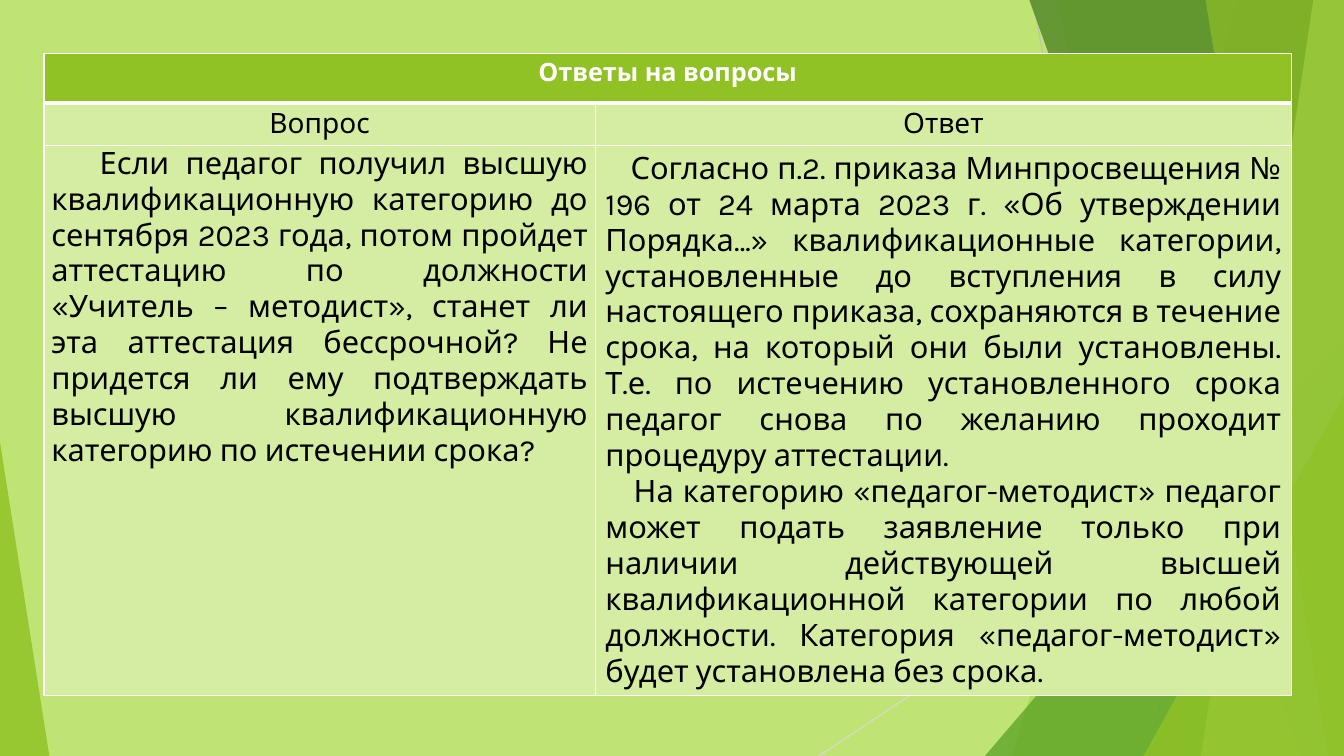
from lxml.etree import SubElement
from pptx import Presentation
from pptx.dml.color import RGBColor
from pptx.enum.shapes import MSO_CONNECTOR, MSO_SHAPE
from pptx.enum.text import PP_ALIGN
from pptx.oxml.ns import qn
from pptx.util import Pt

EMU_PER_PX = 9525
WIDTH, HEIGHT = 1280, 720
FONT = "Karla"
LIME, PALE_LIME, LIGHT_GREEN = "90C226", "D5EDA2", "C0E474"
GREEN, DARK_GREEN = "54A021", "3F7819"
WHITE, BLACK = "FFFFFF", "000000"

QUESTION = (
    "Если педагог получил высшую квалификационную категорию до сентября 2023 года, "
    "потом пройдет аттестацию по должности «Учитель – методист», станет ли эта "
    "аттестация бессрочной? Не придется ли ему подтверждать высшую "
    "квалификационную категорию по истечении срока?"
)
ANSWER = (
    "Согласно п.2. приказа Минпросвещения № 196 от 24 марта 2023 г. «Об утверждении "
    "Порядка…» квалификационные категории, установленные до вступления в силу "
    "настоящего приказа, сохраняются в течение срока, на который они были "
    "установлены. Т.е. по истечению установленного срока педагог снова по желанию "
    "проходит процедуру аттестации.\n"
    "На категорию «педагог-методист» педагог может подать заявление только при "
    "наличии действующей высшей квалификационной категории по любой должности. "
    "Категория «педагог-методист» будет установлена без срока."
)


def px(length):
    return length * EMU_PER_PX


def paint(fill, color, opacity=100):
    fill.solid()
    fill.fore_color.rgb = RGBColor.from_string(color)
    if opacity < 100:
        srgb = fill._xPr.find(qn("a:solidFill"))[0]
        SubElement(srgb, qn("a:alpha")).set("val", str(opacity * 1000))


def finish_facet(facet, color, opacity):
    facet.shadow.inherit = False
    facet.line.fill.background()
    paint(facet.fill, color, opacity)


def add_ray(slide, start, end, color):
    ray = slide.shapes.add_connector(
        MSO_CONNECTOR.STRAIGHT, *map(px, start), *map(px, end))
    ray.line.color.rgb = RGBColor.from_string(color)
    ray.line.width = Pt(0.75)
    SubElement(ray._element.spPr, qn("a:effectLst"))


def add_band(slide, top_x, bottom_x, color, opacity):
    """Fill from a slanted left edge to the right side of the slide."""
    builder = slide.shapes.build_freeform(top_x, -1, EMU_PER_PX)
    builder.add_line_segments([(WIDTH, -1), (WIDTH, HEIGHT), (bottom_x, HEIGHT)])
    finish_facet(builder.convert_to_shape(), color, opacity)


def add_corner(slide, box, apex, color, opacity):
    corner = slide.shapes.add_shape(MSO_SHAPE.ISOSCELES_TRIANGLE, *map(px, box))
    corner.adjustments[0] = apex
    finish_facet(corner, color, opacity)


def add_backdrop(slide):
    paint(slide.background.fill, LIGHT_GREEN)
    add_ray(slide, (984, 0), (1112, HEIGHT), "BFBFBF")
    add_ray(slide, (WIDTH, 387), (780, HEIGHT), "D9D9D9")
    add_band(slide, 1179, 964, LIME, 30)
    add_band(slide, 1008, 1136, LIME, 20)
    add_corner(slide, (938, 320, 342, 400), 1, GREEN, 72)
    add_band(slide, 980, 1239, DARK_GREEN, 70)
    add_band(slide, 1251, 1144, LIGHT_GREEN, 70)
    add_band(slide, 1148, 1265, LIME, 65)
    add_corner(slide, (1089, 377, 191, 343), 1, LIME, 80)
    add_corner(slide, (0, 421, 47, 299), 0, LIME, 85)


def style_cell(cell, color, top=1, bottom=1):
    """Fill the cell and draw white borders, with widths in points."""
    properties = cell._tc.get_or_add_tcPr()
    for side, width in (("L", 1), ("R", 1), ("T", top), ("B", bottom)):
        border = SubElement(properties, qn(f"a:ln{side}"))
        border.set("w", str(Pt(width)))
        solid = SubElement(border, qn("a:solidFill"))
        SubElement(solid, qn("a:srgbClr")).set("val", WHITE)
    paint(cell.fill, color)


def write_cell(cell, text, size, align, color=BLACK, bold=False, indents=()):
    cell.text_frame.text = text
    for paragraph in cell.text_frame.paragraphs:
        paragraph.alignment = align
        for run in paragraph.runs:
            run.font.name = FONT
            run.font.size = Pt(size)
            run.font.bold = bold
            run.font.color.rgb = RGBColor.from_string(color)
    for paragraph, indent in zip(cell.text_frame.paragraphs, indents):
        properties = paragraph._p.get_or_add_pPr()
        properties.set("marL", "0")
        properties.set("indent", str(px(indent)))


def add_answers_table(slide):
    columns, rows = (525, 663), (47, 41, 523)
    table = slide.shapes.add_table(
        len(rows), len(columns), px(42), px(51), px(sum(columns)), px(sum(rows))).table
    for column, width in zip(table.columns, columns):
        column.width = px(width)
    for row, height in zip(table.rows, rows):
        row.height = px(height)
    table.horz_banding = False

    for column in range(len(columns)):
        style_cell(table.cell(0, column), LIME, bottom=3)
        style_cell(table.cell(1, column), PALE_LIME, top=3)
        style_cell(table.cell(2, column), PALE_LIME)

    title = table.cell(0, 0)
    title.merge(table.cell(0, 1))
    write_cell(title, "Ответы на вопросы", 18, PP_ALIGN.CENTER, WHITE, True)
    for column, heading in enumerate(("Вопрос", "Ответ")):
        write_cell(table.cell(1, column), heading, 20, PP_ALIGN.CENTER)

    question, answer = table.cell(2, 0), table.cell(2, 1)
    question.margin_left = question.margin_right = px(7)
    question.margin_top = question.margin_bottom = 0
    write_cell(question, QUESTION, 22, PP_ALIGN.JUSTIFY, indents=(46,))
    write_cell(answer, ANSWER, 22, PP_ALIGN.JUSTIFY, indents=(24, 27))


def main():
    deck = Presentation()
    deck.slide_width, deck.slide_height = px(WIDTH), px(HEIGHT)
    slide = deck.slides.add_slide(deck.slide_layouts[6])
    add_backdrop(slide)
    add_answers_table(slide)
    deck.save("out.pptx")


if __name__ == "__main__":
    main()
